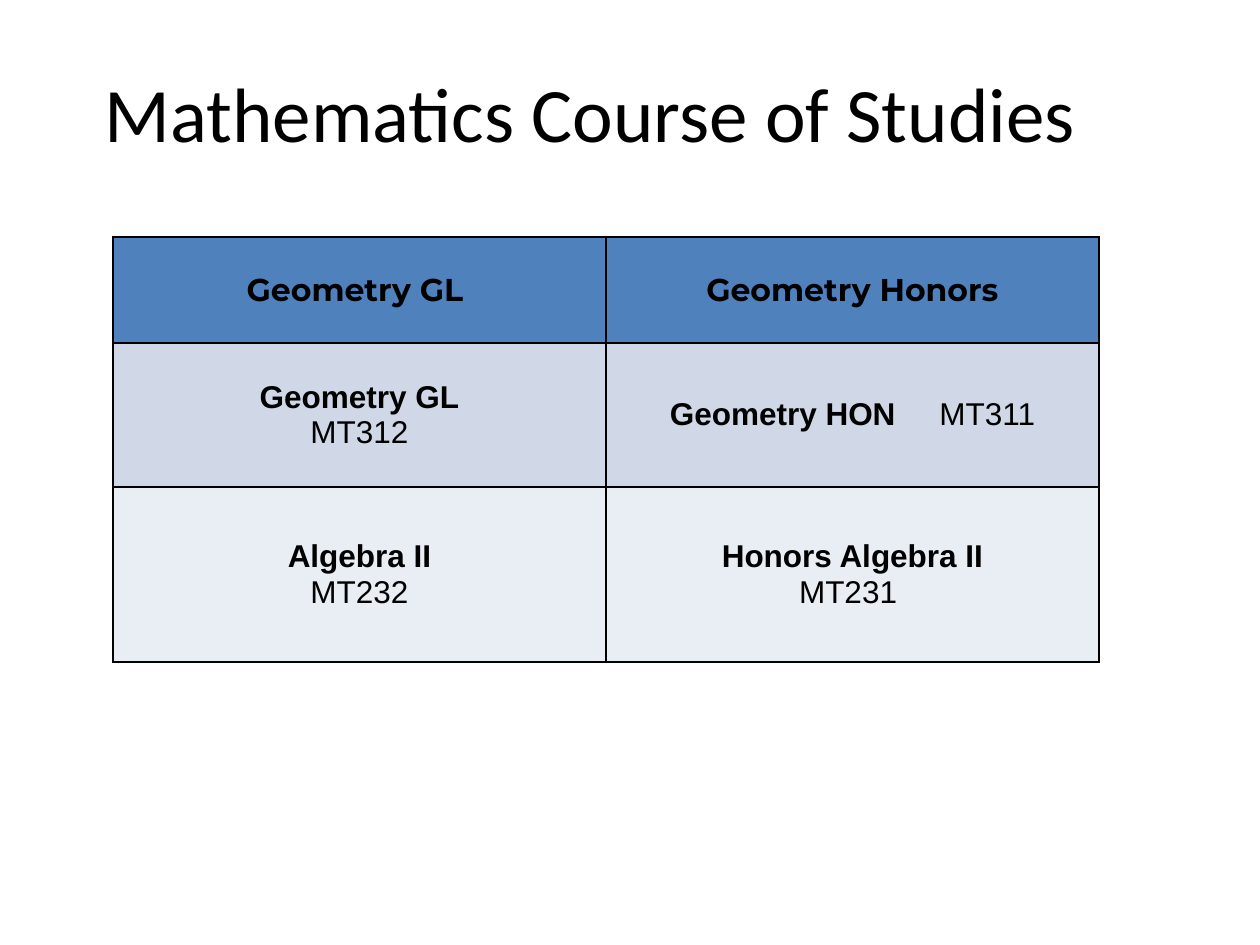
import pptx
import pptx.util
import pptx.oxml
import pptx.oxml.ns
from pptx.dml.color import RGBColor
from pptx.enum.text import MSO_ANCHOR, PP_ALIGN

PX = 914400 / 126

BLACK = RGBColor(0x00, 0x00, 0x00)
HEADER_BLUE = RGBColor(0x4F, 0x81, 0xBD)
BAND_BLUE = RGBColor(0xD0, 0xD8, 0xE8)
BAND_PALE = RGBColor(0xE9, 0xED, 0xF4)

COLUMN_WIDTHS = [493, 493]
ROW_HEIGHTS = [106, 144, 175]
ROW_FILLS = [HEADER_BLUE, BAND_BLUE, BAND_PALE]
ROW_FONTS = ["Montserrat", "Arial", "Arial"]

# Each cell is a list of lines, each line a list of (text, bold, letter spacing)
COURSES = [
    [[[("Geometry GL ", True, 0)]],
     [[("Geometry Honors", True, 0)]]],
    [[[("Geometry GL", True, 0)], [("MT312", False, 0)]],
     [[("Geometry HON", True, 0), (" ", True, 20), ("MT311", False, 0)]]],
    [[[("Algebra II", True, 0)], [("MT232", False, 0)]],
     [[("Honors Algebra II", True, 0)], [("MT231 ", False, 0)]]],
]


def px(length):
    return pptx.util.Emu(round(length * PX))


def style_run(run, font_name, size, bold=False):
    run.font.name = font_name
    run.font.size = pptx.util.Pt(size)
    run.font.bold = bold
    run.font.color.rgb = BLACK


def add_title(slide, text):
    title = slide.shapes.title
    title.left, title.top, title.width, title.height = map(px, (53, 53, 1075, 118))
    frame = title.text_frame
    frame.text = text
    frame.vertical_anchor = MSO_ANCHOR.MIDDLE
    frame.paragraphs[0].alignment = PP_ALIGN.CENTER
    style_run(frame.paragraphs[0].runs[0], "Calibri", 44)


def set_borders(cell):
    """Draw a 1 pt line on all four sides, ahead of the fill in the XML."""
    properties = cell._tc.get_or_add_tcPr()
    for position, side in enumerate(("lnL", "lnR", "lnT", "lnB")):
        line = pptx.oxml.parse_xml(
            f'<a:{side} {pptx.oxml.ns.nsdecls("a")} w="12700">'
            f'<a:solidFill><a:srgbClr val="{BLACK}"/></a:solidFill></a:{side}>')
        properties.insert(position, line)


def fill_cell(cell, lines, fill, font_name):
    cell.fill.solid()
    cell.fill.fore_color.rgb = fill
    cell.vertical_anchor = MSO_ANCHOR.MIDDLE
    cell.margin_left = cell.margin_right = px(9)
    cell.margin_top = cell.margin_bottom = px(5)
    set_borders(cell)
    frame = cell.text_frame
    for number, line in enumerate(lines):
        paragraph = frame.add_paragraph() if number else frame.paragraphs[0]
        paragraph.alignment = PP_ALIGN.CENTER
        for text, bold, spacing in line:
            run = paragraph.add_run()
            run.text = text
            style_run(run, font_name, 18, bold)
            if spacing:
                run._r.get_or_add_rPr().set("spc", str(spacing * 100))


def add_course_table(slide):
    table = slide.shapes.add_table(
        len(ROW_HEIGHTS), len(COLUMN_WIDTHS), px(113), px(237),
        px(sum(COLUMN_WIDTHS)), px(sum(ROW_HEIGHTS))).table
    for column, width in zip(table.columns, COLUMN_WIDTHS):
        column.width = px(width)
    for row, height, courses, fill, font_name in zip(
            table.rows, ROW_HEIGHTS, COURSES, ROW_FILLS, ROW_FONTS):
        row.height = px(height)
        for cell, lines in zip(row.cells, courses):
            fill_cell(cell, lines, fill, font_name)


def main():
    presentation = pptx.Presentation()
    presentation.slide_width = pptx.util.Inches(10)
    presentation.slide_height = pptx.util.Inches(7.5)
    slide = presentation.slides.add_slide(presentation.slide_layouts[5])

    add_title(slide, "Mathematics Course of Studies")
    add_course_table(slide)

    presentation.save("out.pptx")


if __name__ == "__main__":
    main()
